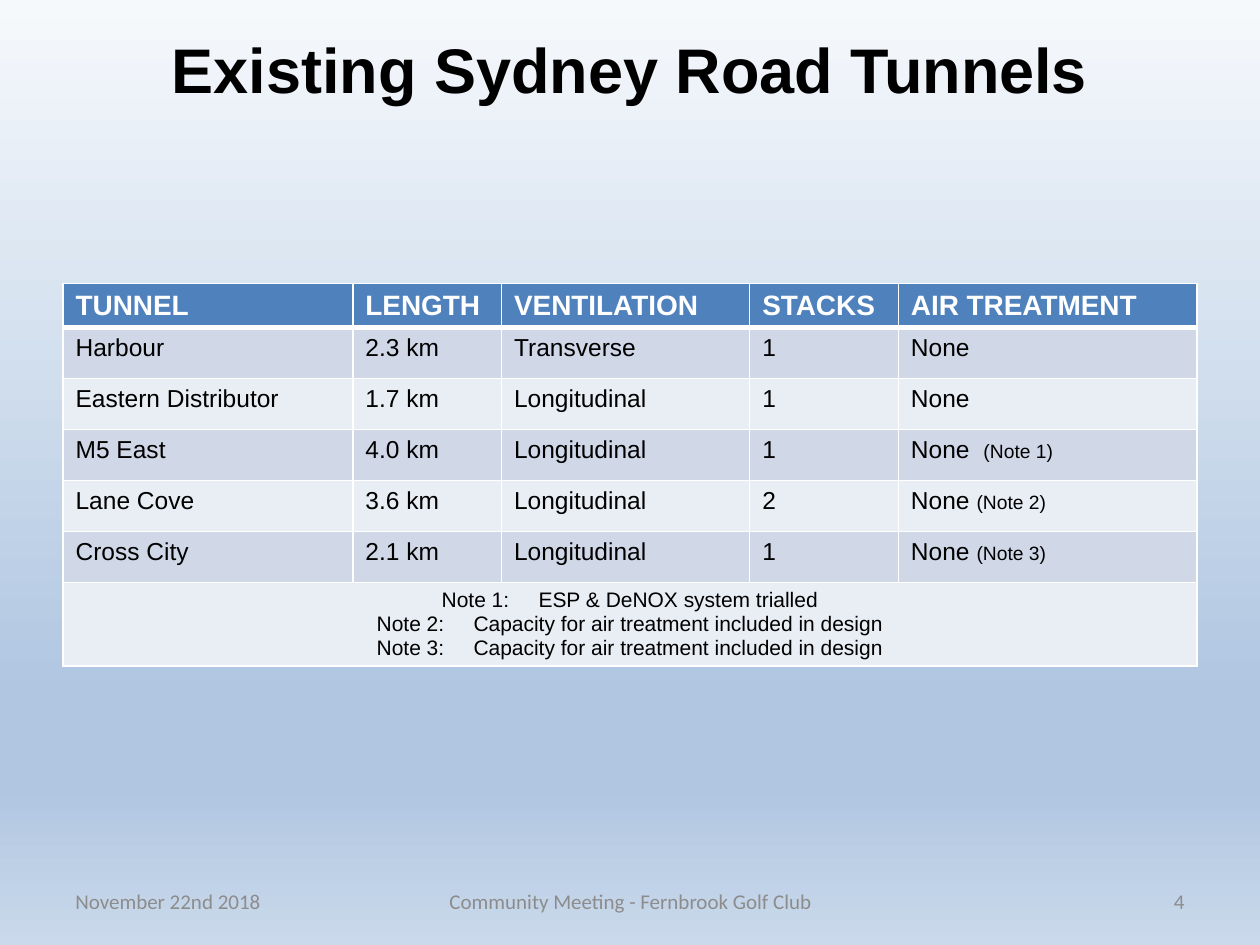
from lxml import etree
from pptx import Presentation
from pptx import util as u
from pptx.dml.color import RGBColor
from pptx.enum import text
from pptx.oxml.ns import qn

COLORS = {
    "black": "000000", "white": "FFFFFF", "footer": "8C8C8C",
    "header": "4F81BD", "odd": "D0D8E8", "even": "E9EDF4",
}
BACKGROUND = [(0, "F6F9FC"), (74, "B0C6E1"), (83, "B0C6E1"), (100, "CAD9EB")]
WIDTH, HEIGHT = u.Inches(10), u.Inches(7.5)
MARGIN = int(WIDTH * 0.05)
ALIGN = text.PP_ALIGN


def add_text(paragraph, words, size=14, font="Arial", color="black", bold=False,
             align=ALIGN.LEFT, spacing=0):
    """Add one run; spacing is the extra width after each letter, in points."""
    paragraph.alignment = align
    run = paragraph.add_run()
    run.text = words
    run.font.size = u.Pt(size)
    run.font.name = font
    run.font.bold = bold
    run.font.color.rgb = RGBColor.from_string(COLORS[color])
    if spacing:
        run.font._element.set("spc", str(int(spacing * 100)))


def set_borders(cell, **points):
    """Draw white cell borders; keywords L, R, T and B give widths in points."""
    properties = cell._tc.get_or_add_tcPr()
    for position, (side, width) in enumerate(points.items()):
        line = etree.Element(qn(f"a:ln{side}"), w=str(u.Pt(width)))
        fill = etree.SubElement(line, qn("a:solidFill"))
        etree.SubElement(fill, qn("a:srgbClr"), val=COLORS["white"])
        properties.insert(position, line)


presentation = Presentation()
presentation.slide_width, presentation.slide_height = WIDTH, HEIGHT
slide = presentation.slides.add_slide(presentation.slide_layouts[5])

# Background gradient, top to bottom
background = slide.background.fill
background.gradient()
background.gradient_angle = 270
stops = slide.element.find(".//" + qn("a:gsLst"))
for stop in list(stops):
    stops.remove(stop)
for percent, color in BACKGROUND:
    stop = etree.SubElement(stops, qn("a:gs"), pos=str(percent * 1000))
    etree.SubElement(stop, qn("a:srgbClr"), val=color)

# Title, with an empty second line of the same size
title = slide.shapes.title
title.left, title.top = MARGIN, int(HEIGHT * 0.04)
title.width, title.height = WIDTH - 2 * MARGIN, int(HEIGHT * 0.145)
title.text_frame.auto_size = text.MSO_AUTO_SIZE.NONE
title.text_frame.vertical_anchor = text.MSO_ANCHOR.MIDDLE
heading = title.text_frame.paragraphs[0]
add_text(heading, "Existing Sydney Road Tunnels", size=36, bold=True, align=ALIGN.CENTER)
heading.add_line_break()
etree.SubElement(heading._p, qn("a:endParaRPr"), sz="3600")

# Table of tunnels
headers = ["TUNNEL", "LENGTH", "VENTILATION", "STACKS", "AIR TREATMENT"]
tunnels = [
    ["Harbour", "2.3 km", "Transverse", "1", "None"],
    ["Eastern Distributor", "1.7 km", "Longitudinal", "1", "None"],
    ["M5 East", "4.0 km", "Longitudinal", "1", "None"],
    ["Lane Cove", "3.6 km", "Longitudinal", "2", "None"],
    ["Cross City", "2.1 km", "Longitudinal", "1", "None"],
]
references = {3: "(Note 1)", 4: "(Note 2)", 5: "(Note 3)"}
notes = [
    ("Note 1:", "ESP & DeNOX system trialled"),
    ("Note 2:", "Capacity for air treatment included in design"),
    ("Note 3:", "Capacity for air treatment included in design"),
]
column_widths = [2.3, 1.18, 1.97, 1.18, 2.37]
row_heights = [0.35] + [0.405] * len(tunnels) + [0.66]
last_row = len(row_heights) - 1

table = slide.shapes.add_table(
    len(row_heights), len(headers), MARGIN, int(HEIGHT * 0.3),
    WIDTH - 2 * MARGIN, u.Inches(sum(row_heights))).table
for column, width in zip(table.columns, column_widths):
    column.width = u.Inches(width)
for row, height in zip(table.rows, row_heights):
    row.height = u.Inches(height)

for r in range(len(row_heights)):
    band = "header" if r == 0 else "odd" if r % 2 else "even"
    for c in range(len(headers)):
        cell = table.cell(r, c)
        cell.fill.solid()
        cell.fill.fore_color.rgb = RGBColor.from_string(COLORS[band])
        set_borders(cell, L=1, R=1, T=3 if r == 1 else 1, B=3 if r == 0 else 1)
        paragraph = cell.text_frame.paragraphs[0]
        if r == 0:
            add_text(paragraph, headers[c], size=16, color="white", bold=True)
        elif r < last_row:
            add_text(paragraph, tunnels[r - 1][c])
    if r in references:
        add_text(paragraph, " ", spacing=4 if r == 3 else 0)
        add_text(paragraph, references[r], size=11)

notes_cell = table.cell(last_row, 0)
notes_cell.merge(table.cell(last_row, len(headers) - 1))
for index, (label, note) in enumerate(notes):
    frame = notes_cell.text_frame
    paragraph = frame.add_paragraph() if index else frame.paragraphs[0]
    for words, spacing in [(label, 0), (" ", 13.3), (note, 0)]:
        add_text(paragraph, words, size=12, align=ALIGN.CENTER, spacing=spacing)

# Footer
footers = [
    ("November 22nd 2018", 0.05, 0.233, ALIGN.LEFT),
    ("Community Meeting - Fernbrook Golf Club", 0.342, 0.317, ALIGN.CENTER),
    ("4", 0.717, 0.233, ALIGN.RIGHT),
]
for words, left, width, align in footers:
    footer = slide.shapes.add_textbox(
        int(WIDTH * left), u.Inches(6.95), int(WIDTH * width), u.Inches(0.4))
    footer.text_frame.word_wrap = True
    footer.text_frame.vertical_anchor = text.MSO_ANCHOR.MIDDLE
    add_text(footer.text_frame.paragraphs[0], words, size=12, font="Calibri",
             color="footer", align=align)

presentation.save("out.pptx")
